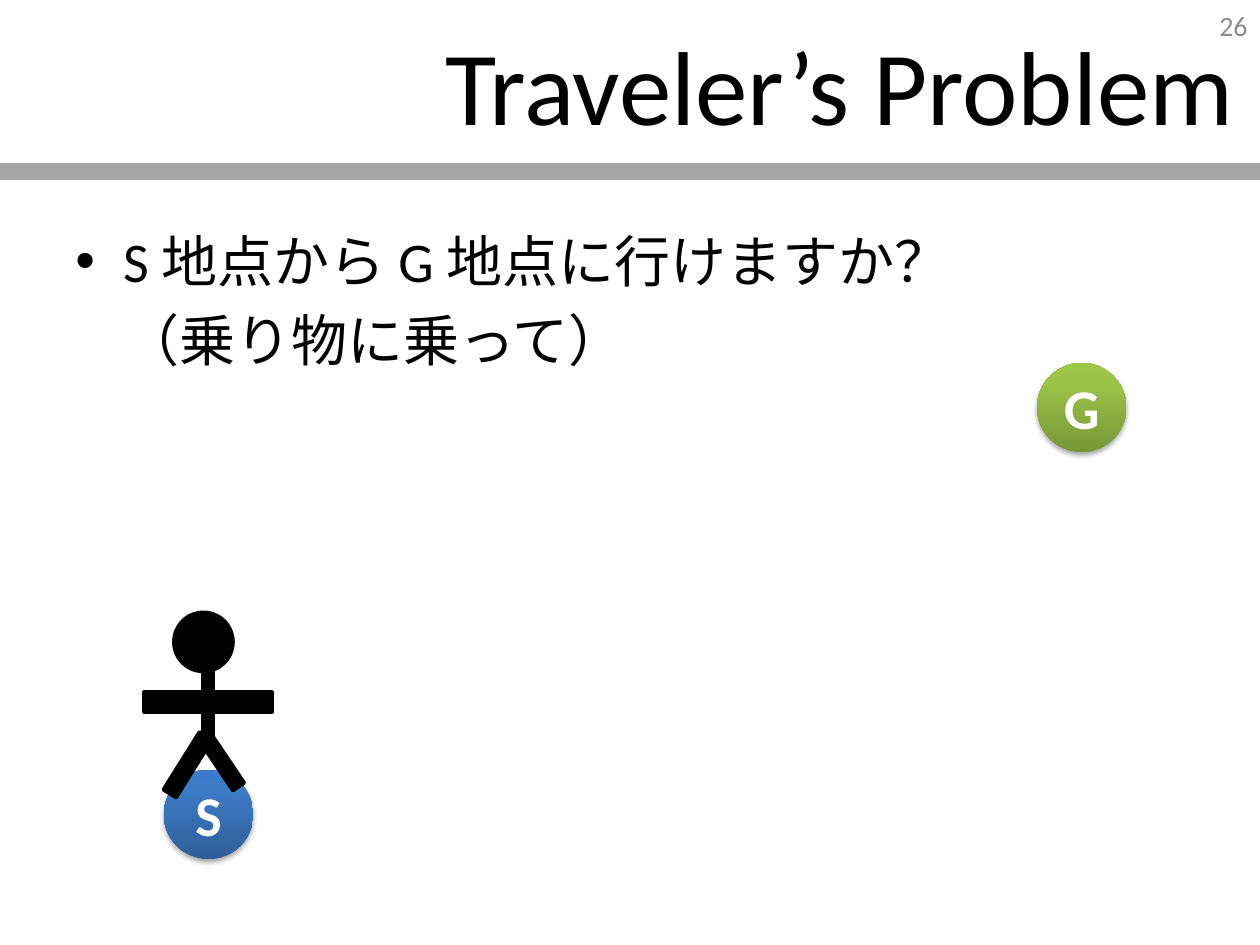
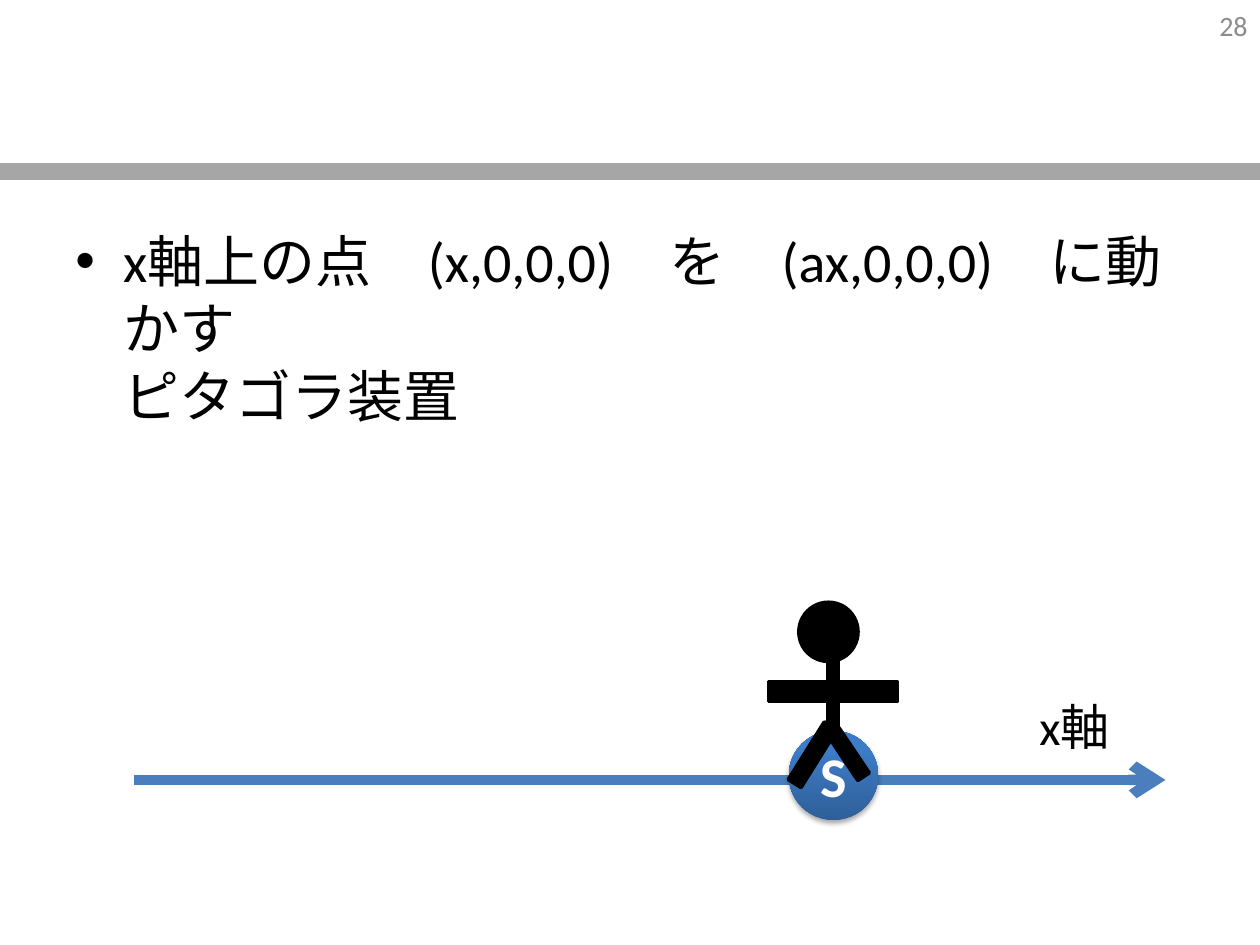
from lxml.etree import SubElement
from pptx import Presentation
from pptx.dml.color import RGBColor
from pptx.enum.shapes import MSO_CONNECTOR, MSO_SHAPE
from pptx.enum.text import MSO_ANCHOR, PP_ALIGN
from pptx.oxml.ns import qn
from pptx.util import Inches, Pt

COLUMNS, ROWS = 10, 7.5
TITLE_ONLY, BLANK = 5, 6
BLACK, WHITE, GRAY, BAND, AXIS = "000000", "FFFFFF", "8C8C8C", "A6A6A6", "4B7EBC"
GREEN = [(0, "779737"), (80, "9BC348"), (100, "9DC746")]
BLUE = [(0, "2F5F99"), (80, "3D7CC7"), (100, "3A7CCB")]
BODY_BOX = (0.5, 1.75, 9, 4.95)
POINT_SIZE = 0.71
TRAVELER_PARTS = [
    (MSO_SHAPE.OVAL, 0.24, 0, 0.47, 0.47, 0),
    (MSO_SHAPE.RECTANGLE, 0.47, 0.31, 0.08, 0.79, 0),
    (MSO_SHAPE.RECTANGLE, 0, 0.63, 1.02, 0.16, 0),
    (MSO_SHAPE.RECTANGLE, 0.08, 1.15, 0.54, 0.12, 302),
    (MSO_SHAPE.RECTANGLE, 0.38, 1.13, 0.48, 0.11, 236.1),
]


def color(hex_string):
    return RGBColor.from_string(hex_string)


def write(paragraph, text, size=32, fill=BLACK, bold=False, align=PP_ALIGN.LEFT):
    paragraph.alignment = align
    for index, line in enumerate(text.split("\n")):
        if index:
            paragraph.add_line_break()
        run = paragraph.add_run()
        run.text = line
        run.font.name = "Calibri"
        run.font.size = Pt(size)
        run.font.bold = bold
        run.font.color.rgb = color(fill)


def add_color(parent, hex_string):
    return SubElement(parent, qn("a:srgbClr"), val=hex_string)


class Deck:
    def __init__(self):
        self.presentation = Presentation()
        self.presentation.slide_width = Inches(10)
        self.presentation.slide_height = Inches(7.5)
        self.column = self.presentation.slide_width / COLUMNS
        self.row = self.presentation.slide_height / ROWS
        self.slide = None

    def place(self, left, top, width, height):
        return (int(left * self.column), int(top * self.row),
                int(width * self.column), int(height * self.row))

    def new_slide(self, number, title=None):
        layout = self.presentation.slide_layouts[TITLE_ONLY if title else BLANK]
        self.slide = self.presentation.slides.add_slide(layout)
        self.text((7.67, 0, 2.33, 0.4), str(number), anchor=MSO_ANCHOR.MIDDLE,
                  size=16, fill=GRAY, align=PP_ALIGN.RIGHT)
        self.line((0, 1.36), (COLUMNS, 1.36), BAND, 10)
        if title:
            self.title(title)

    def title(self, text):
        shape = self.slide.shapes.title
        shape.left, shape.top, shape.width, shape.height = self.place(0.89, 0.04, 9, 1.25)
        shape.text_frame.vertical_anchor = MSO_ANCHOR.MIDDLE
        write(shape.text_frame.paragraphs[0], text, size=60, align=PP_ALIGN.RIGHT)

    def text(self, box, text, anchor=MSO_ANCHOR.TOP, **style):
        shape = self.slide.shapes.add_textbox(*self.place(*box))
        frame = shape.text_frame
        frame.word_wrap = True
        frame.vertical_anchor = anchor
        write(frame.paragraphs[0], text, **style)
        return frame

    def body(self, bullet, continuation=None):
        frame = self.text(BODY_BOX, bullet)
        if continuation:
            write(frame.add_paragraph(), continuation)
        margin = Inches(0.38)
        for index, paragraph in enumerate(frame.paragraphs):
            paragraph.space_before = Pt(6.4)
            properties = paragraph._p.get_or_add_pPr()
            properties.set("marL", str(margin))
            properties.set("indent", str(0 if index else -margin))
            if index == 0:
                SubElement(properties, qn("a:buFont"), typeface="Arial")
                SubElement(properties, qn("a:buChar"), char="•")

    def line(self, start, end, stroke, weight, arrow=False):
        connector = self.slide.shapes.add_connector(
            MSO_CONNECTOR.STRAIGHT, *self.place(*start, *end))
        connector.line.color.rgb = color(stroke)
        connector.line.width = Pt(weight)
        properties = connector._element.spPr
        if arrow:
            SubElement(properties.find(qn("a:ln")), qn("a:tailEnd"), type="arrow")
        SubElement(properties, qn("a:effectLst"))

    def point(self, left, top, label, stops):
        shape = self.slide.shapes.add_shape(
            MSO_SHAPE.OVAL, *self.place(left, top, POINT_SIZE, POINT_SIZE))
        shape.line.fill.background()
        shape.shadow.inherit = False
        shape.fill.gradient()
        properties = shape._element.spPr
        gradient = properties.find(qn("a:gradFill"))
        for child in list(gradient):
            gradient.remove(child)
        stop_list = SubElement(gradient, qn("a:gsLst"))
        for position, hex_string in stops:
            add_color(SubElement(stop_list, qn("a:gs"), pos=str(position * 1000)), hex_string)
        SubElement(gradient, qn("a:lin"), ang=str(270 * 60000), scaled="0")
        shadow = SubElement(properties.find(qn("a:effectLst")), qn("a:outerShdw"),
                            blurRad=str(Pt(3.1)), dist=str(Pt(1.8)),
                            dir=str(90 * 60000), rotWithShape="0")
        SubElement(add_color(shadow, BLACK), qn("a:alpha"), val="35000")
        frame = shape.text_frame
        frame.margin_left = frame.margin_right = 0
        frame.vertical_anchor = MSO_ANCHOR.MIDDLE
        write(frame.paragraphs[0], label, fill=WHITE, bold=True, align=PP_ALIGN.CENTER)

    def traveler(self, left, top):
        group = self.slide.shapes.add_group_shape()
        for kind, across, down, width, height, rotation in TRAVELER_PARTS:
            shape = group.shapes.add_shape(
                kind, *self.place(left + across, top + down, width, height))
            shape.rotation = rotation
            shape.shadow.inherit = False
            shape.fill.solid()
            shape.fill.fore_color.rgb = color(BLACK)
            shape.line.color.rgb = color(BLACK)
            shape.line.width = Pt(2)


def main():
    deck = Deck()

    deck.new_slide(26, "Traveler’s Problem")
    deck.body("S 地点から G 地点に行けますか？", "（乗り物に乗って）")
    deck.point(8.23, 2.88, "G", GREEN)
    deck.point(1.3, 6.11, "S", BLUE)
    deck.traveler(1.14, 4.86)

    deck.new_slide(28)
    deck.body("x軸上の点　(x,0,0,0)　を　(ax,0,0,0)　に動かす\nピタゴラ装置")
    deck.line((1.06, 6.19), (9.25, 6.19), AXIS, 6, arrow=True)
    deck.text((8.15, 5.48, 1.42, 0.57), "x軸", size=28)
    deck.point(6.26, 5.8, "S", BLUE)
    deck.traveler(6.1, 4.78)

    deck.presentation.save("out.pptx")


if __name__ == "__main__":
    main()
